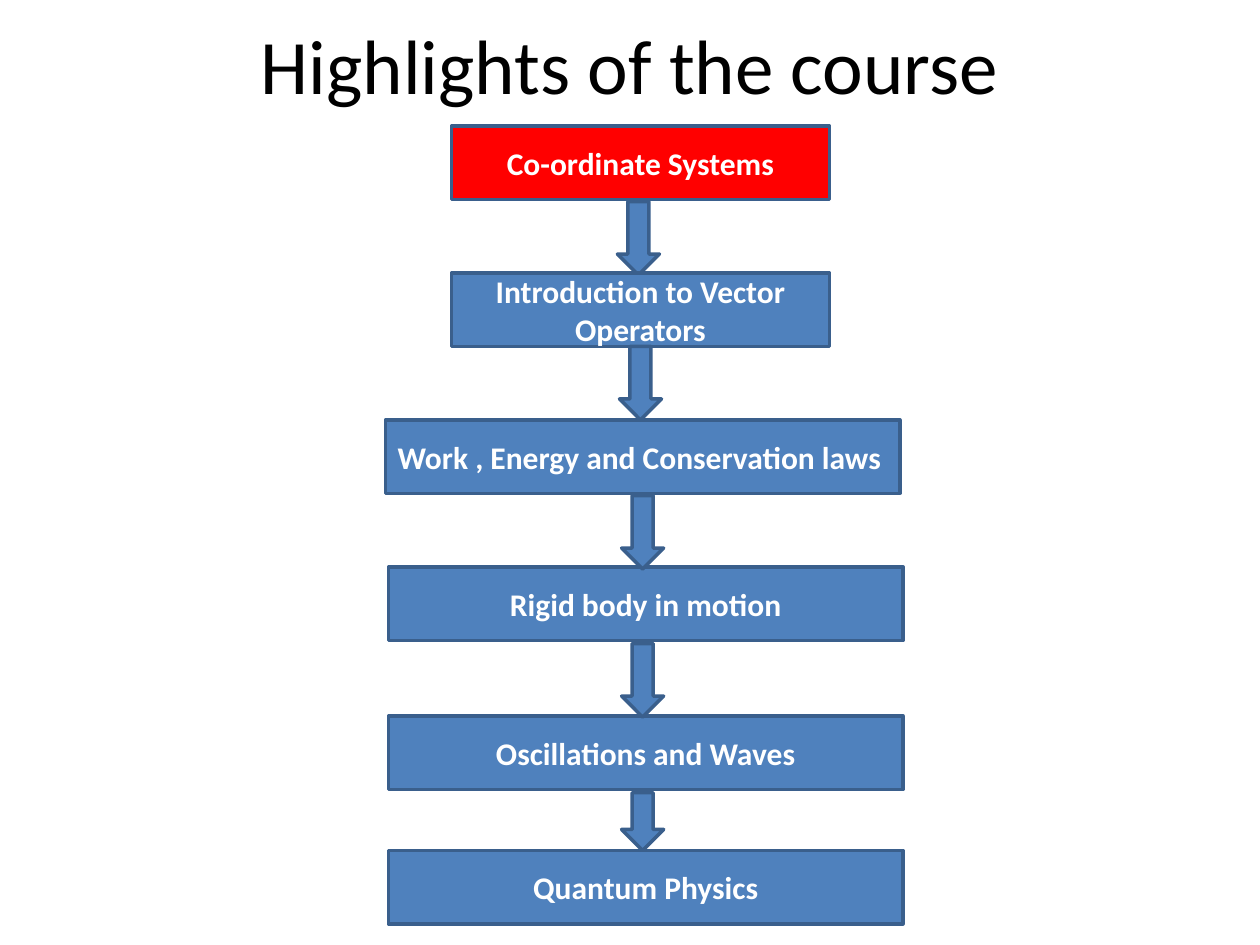
from dataclasses import dataclass

from pptx import Presentation
from pptx.dml.color import RGBColor
from pptx.enum.shapes import MSO_SHAPE
from pptx.enum.text import MSO_ANCHOR, PP_ALIGN
from pptx.util import Inches, Pt

RECT, ARROW = MSO_SHAPE.RECTANGLE, MSO_SHAPE.DOWN_ARROW
MIDDLE = MSO_ANCHOR.MIDDLE
LEFT, CENTER = PP_ALIGN.LEFT, PP_ALIGN.CENTER

COLORS = {"red": "FF0000", "blue": "4F81BD", "edge": "3A5F8C",
          "white": "FFFFFF", "black": "000000"}
CELL = Inches(1) / 12
BOX_ROWS, ARROW_COLS = 7, 4
NARROW, WIDE = 36, 49
TITLE_FONT = {"name": "Calibri", "size": Pt(44), "bold": False}
TOPIC_FONT = {"name": "Calibri", "size": Pt(18), "bold": True}


@dataclass
class Topic:
    text: str
    col: float
    row: float
    cols: float
    fill: str = "blue"
    align: PP_ALIGN = CENTER


@dataclass
class Arrow:
    col: float
    row: float
    rows: float = 7


FLOW = [
    Topic("Co-ordinate Systems", 43, 12, NARROW, fill="red"),
    Arrow(58.8, 19.2),
    Topic("Introduction to Vector Operators", 43, 26, NARROW),
    Topic("Work , Energy and Conservation laws", 36.7, 40, WIDE, align=LEFT),
    Arrow(59, 33),
    Topic("Rigid body in motion", 37, 54, WIDE),
    Arrow(59.2, 47.2),
    Topic("Oscillations and Waves", 37, 68.2, WIDE),
    Arrow(59.2, 61.3),
    Topic("Quantum Physics", 37, 81, WIDE),
    Arrow(59.2, 75.5, 5.5),
]


def color(name: str) -> RGBColor:
    return RGBColor.from_string(COLORS[name])


def grid(*cells: float) -> list[int]:
    return [round(n * CELL) for n in cells]


def write(s, text: str, fmt: dict, ink: str, align: PP_ALIGN) -> None:
    tf = s.text_frame
    tf.word_wrap = True
    tf.vertical_anchor = MIDDLE
    p = tf.paragraphs[0]
    p.alignment = align
    r = p.add_run()
    r.text = text
    for key, value in fmt.items():
        setattr(r.font, key, value)
    r.font.color.rgb = color(ink)


def add_block(shapes, kind: MSO_SHAPE, fill: str, *cells: float):
    s = shapes.add_shape(kind, *grid(*cells))
    s.shadow.inherit = False
    s.fill.solid()
    s.fill.fore_color.rgb = color(fill)
    s.line.color.rgb = color("edge")
    s.line.width = Pt(2)
    return s


def add_topic(shapes, t: Topic) -> None:
    s = add_block(shapes, RECT, t.fill, t.col, t.row, t.cols, BOX_ROWS)
    write(s, t.text, TOPIC_FONT, "white", t.align)


def add_arrow(shapes, a: Arrow) -> None:
    add_block(shapes, ARROW, "blue", a.col, a.row, ARROW_COLS, a.rows)


def main() -> None:
    prs = Presentation()
    prs.slide_width, prs.slide_height = Inches(10), Inches(7.5)
    shapes = prs.slides.add_slide(prs.slide_layouts[6]).shapes
    title = shapes.add_textbox(*grid(6, 0.1, 108, 12))
    write(title, "Highlights of the course", TITLE_FONT, "black", CENTER)
    for item in FLOW:
        if isinstance(item, Topic):
            add_topic(shapes, item)
        else:
            add_arrow(shapes, item)
    prs.save("out.pptx")


if __name__ == "__main__":
    main()
